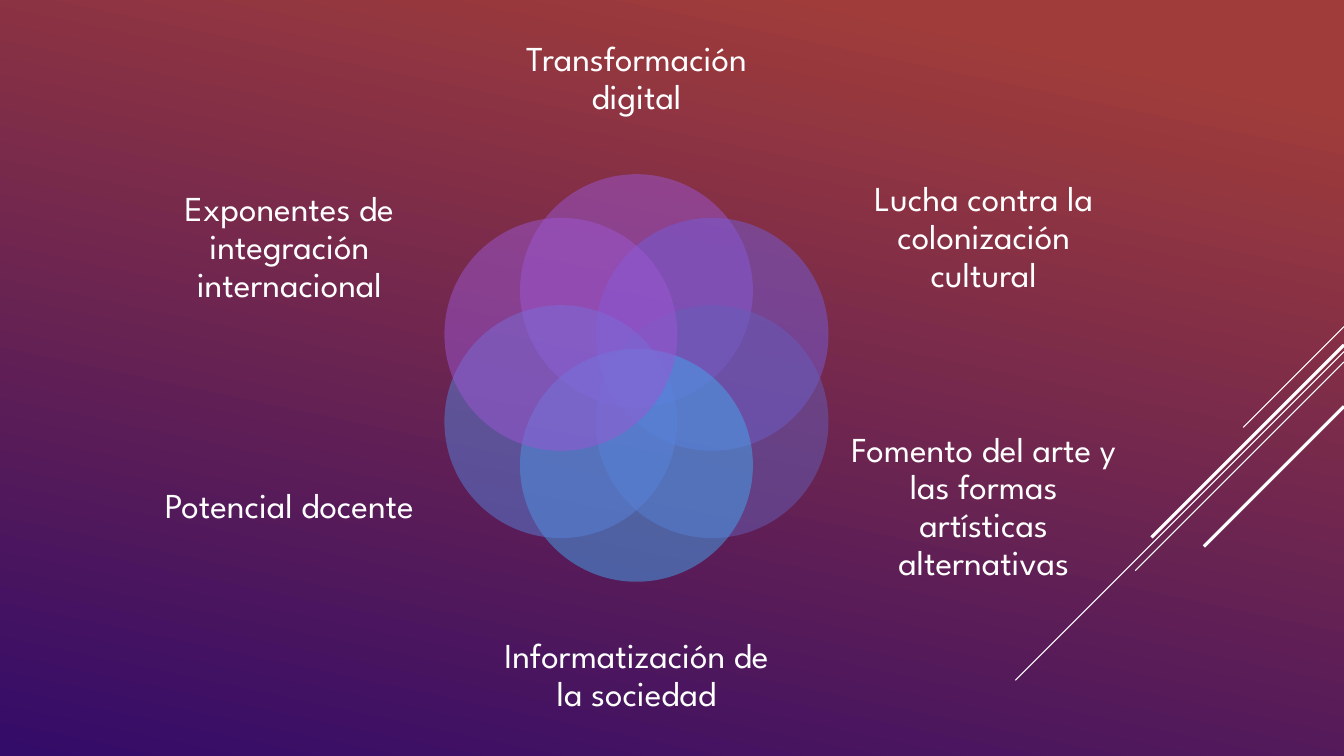
from math import cos, radians, sin

from lxml.etree import SubElement
from pptx import Presentation
from pptx.dml.color import RGBColor
from pptx.enum.shapes import MSO_CONNECTOR as Link, MSO_SHAPE as Form
from pptx.enum.text import MSO_ANCHOR as Anchor, PP_ALIGN as Align
from pptx.oxml.ns import qn
from pptx.util import Cm, Pt

WHITE = RGBColor(0xFF, 0xFF, 0xFF)
RED = RGBColor(0xA0, 0x3C, 0x3A)
NAVY = RGBColor(0x33, 0x0B, 0x69)
PURPLE = RGBColor(0x9B, 0x57, 0xD3)
VIOLET = RGBColor(0x75, 0x5D, 0xD9)
INDIGO = RGBColor(0x66, 0x5E, 0xB8)
SKY = RGBColor(0x45, 0xA5, 0xED)
BLUE = RGBColor(0x59, 0x82, 0xDB)

FONT = "League Spartan"
WIDTH, HEIGHT = 33.87, 19.05
MID_X, MID_Y = 16.04, HEIGHT / 2
RING, SIZE = 2.2, 5.87
LEFT, RIGHT, SIDE = 3.81, 21.31, 6.96
POLE, WIDE, TALL = 12.37, 7.34, 3.99
UPPER, LOWER = 3.81, 10.34

PETALS = [
    ("Transformación digital", PURPLE, (POLE, 0, WIDE, TALL)),
    ("Lucha contra la colonización cultural", VIOLET, (RIGHT, UPPER, SIDE, 4.39)),
    ("Fomento del arte y las formas artísticas alternativas", INDIGO,
     (RIGHT, LOWER, SIDE, 4.9)),
    ("Informatización de la sociedad", SKY, (POLE, 15.04, WIDE, TALL)),
    ("Potencial docente", BLUE, (LEFT, LOWER, SIDE, 4.9)),
    ("Exponentes de integración internacional", PURPLE, (LEFT, UPPER, SIDE, 4.9)),
]
RAYS = [(8.23, 2.54, 0.75), (8.86, 8.28, 0.75), (9.12, 5.26, 0.75),
        (8.69, 4.85, 2.25), (10.24, 3.53, 2.25)]


def add_ray(slide, top, run, weight):
    ray = slide.shapes.add_connector(
        Link.STRAIGHT, Cm(WIDTH), Cm(top), Cm(WIDTH - run), Cm(top + run))
    ray.line.color.rgb = WHITE
    ray.line.width = Pt(weight)
    SubElement(ray._element.spPr, qn("a:effectLst"))


def add_petal(slide, turn, color):
    x = MID_X + RING * sin(turn) - SIZE / 2
    y = MID_Y - RING * cos(turn) - SIZE / 2
    petal = slide.shapes.add_shape(Form.OVAL, Cm(x), Cm(y), Cm(SIZE), Cm(SIZE))
    petal.shadow.inherit = False
    petal.line.fill.background()
    petal.fill.solid()
    petal.fill.fore_color.rgb = color
    tint = petal._element.spPr.find(".//" + qn("a:srgbClr"))
    SubElement(tint, qn("a:alpha"), val="50000")


def add_label(slide, text, box):
    frame = slide.shapes.add_textbox(*map(Cm, box)).text_frame
    frame.word_wrap = True
    frame.vertical_anchor = Anchor.MIDDLE
    frame.margin_left = frame.margin_right = 0
    frame.margin_top = frame.margin_bottom = 0
    para = frame.paragraphs[0]
    para.text = text
    para.alignment = Align.CENTER
    para.line_spacing = 0.9
    para.space_after = Pt(8.75)
    para.font.name = FONT
    para.font.size = Pt(25)
    para.font.color.rgb = WHITE


def main():
    deck = Presentation()
    deck.slide_width, deck.slide_height = Cm(WIDTH), Cm(HEIGHT)
    slide = deck.slides.add_slide(deck.slide_layouts[6])

    fill = slide.background.fill
    fill.gradient()
    fill.gradient_angle = 258
    for stop, (place, color) in zip(fill.gradient_stops, [(0.1, RED), (1, NAVY)]):
        stop.position = place
        stop.color.rgb = color

    for ray in RAYS:
        add_ray(slide, *ray)
    for i, (text, color, box) in enumerate(PETALS):
        add_petal(slide, radians(i * 360 / len(PETALS)), color)
        add_label(slide, text, box)

    deck.save("out.pptx")


if __name__ == "__main__":
    main()
